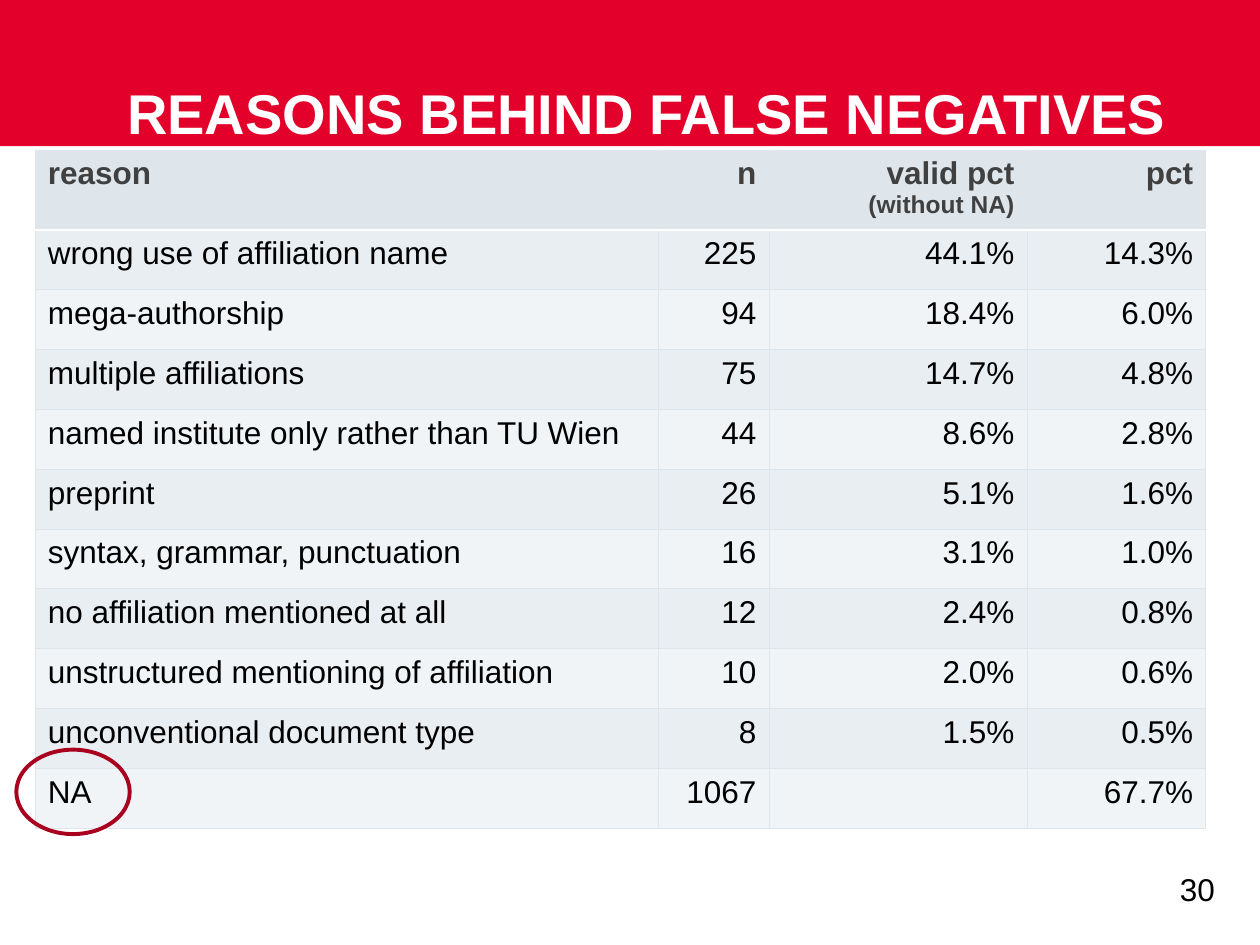
from dataclasses import dataclass

from lxml.etree import SubElement
from pptx import Presentation
from pptx.dml.color import RGBColor
from pptx.enum.shapes import MSO_SHAPE
from pptx.enum.text import MSO_ANCHOR, PP_ALIGN
from pptx.oxml.ns import qn
from pptx.util import Inches, Pt


@dataclass(frozen=True)
class Theme:
    """Colours, font and type sizes of the deck."""

    font: str = "Arial"
    banner: str = "E3002B"
    white: str = "FFFFFF"
    black: str = "000000"
    heading: str = "404040"
    grid: str = "DEE6EC"
    odd_band: str = "E9EEF2"
    even_band: str = "F0F4F7"
    marker: str = "AA0020"
    title_size: int = 32
    body_size: int = 18
    note_size: int = 14


THEME = Theme()
COLUMN_WIDTHS = (4.95, 0.88, 2.05, 1.42)
HEADER_HEIGHT = 0.62
ROWS = (
    ("reason", "n", "valid pct\n(without NA)", "pct"),
    ("wrong use of affiliation name", "225", "44.1%", "14.3%"),
    ("mega-authorship", "94", "18.4%", "6.0%"),
    ("multiple affiliations", "75", "14.7%", "4.8%"),
    ("named institute only rather than TU Wien", "44", "8.6%", "2.8%"),
    ("preprint", "26", "5.1%", "1.6%"),
    ("syntax, grammar, punctuation", "16", "3.1%", "1.0%"),
    ("no affiliation mentioned at all", "12", "2.4%", "0.8%"),
    ("unstructured mentioning of affiliation", "10", "2.0%", "0.6%"),
    ("unconventional document type", "8", "1.5%", "0.5%"),
    ("NA", "1067", "", "67.7%"),
)


def set_format(target, values):
    """Set each named attribute of the target."""
    for name, value in values.items():
        setattr(target, name, value)


def write(para, text, size, color, bold=False, align=PP_ALIGN.LEFT):
    """Write one formatted span into a paragraph."""
    para.alignment = align
    span = para.add_run()
    span.text = text
    set_format(span.font, {"name": THEME.font, "size": Pt(size), "bold": bold})
    span.font.color.rgb = RGBColor.from_string(color)


def add_banner(page, left, top, width, height):
    """Place the coloured band with the title at its foot."""
    band = page.shapes.add_shape(MSO_SHAPE.RECTANGLE, left, top, width, height)
    band.shadow.inherit = False
    band.fill.solid()
    band.fill.fore_color.rgb = RGBColor.from_string(THEME.banner)
    band.line.fill.background()
    title_top = top + Inches(0.27)
    box = page.shapes.add_textbox(
        left + Inches(1.01), title_top, Inches(8.73), top + height - title_top
    )
    set_format(box.text_frame, {
        "word_wrap": True,
        "vertical_anchor": MSO_ANCHOR.BOTTOM,
        "margin_left": 0,
        "margin_right": 0,
        "margin_top": 0,
        "margin_bottom": 0,
    })
    para = box.text_frame.paragraphs[0]
    para.line_spacing = Pt(THEME.title_size)
    write(para, "REASONS BEHIND FALSE NEGATIVES", THEME.title_size, THEME.white, True)


def set_borders(cell, borders):
    """Draw the cell edges, given as tag to colour and width."""
    properties = cell._tc.get_or_add_tcPr()
    for position, (tag, (color, width)) in enumerate(borders.items()):
        edge = SubElement(properties, qn(f"a:{tag}"), w=str(Pt(width)))
        fill = SubElement(edge, qn("a:solidFill"))
        SubElement(fill, qn("a:srgbClr"), val=color)
        properties.insert(position, edge)


def fill_cell(cell, text, row, column):
    """Write and colour one table cell."""
    header = row == 0
    band = THEME.grid if header else (THEME.even_band, THEME.odd_band)[row % 2]
    cell.fill.solid()
    cell.fill.fore_color.rgb = RGBColor.from_string(band)
    borders = dict.fromkeys(("lnL", "lnR", "lnT", "lnB"), (THEME.grid, 0.5))
    if row < 2:
        borders["lnB" if header else "lnT"] = (THEME.white, 1)
    set_borders(cell, borders)
    color = THEME.heading if header else THEME.black
    align = PP_ALIGN.RIGHT if column else PP_ALIGN.LEFT
    frame = cell.text_frame
    for index, line in enumerate(text.split("\n")):
        para = frame.add_paragraph() if index else frame.paragraphs[0]
        size = THEME.note_size if index else THEME.body_size
        write(para, line, size, color, header, align)


def add_reason_table(page, left, top, width, height):
    """Place the table of reasons with its banded rows."""
    table = page.shapes.add_table(
        len(ROWS), len(COLUMN_WIDTHS), left, top, width, height
    ).table
    table.horz_banding = False
    for column, share in zip(table.columns, COLUMN_WIDTHS):
        column.width = int(width * share / sum(COLUMN_WIDTHS))
    header_height = Inches(HEADER_HEIGHT)
    for row, texts in enumerate(ROWS):
        body_height = (height - header_height) // (len(ROWS) - 1)
        table.rows[row].height = body_height if row else header_height
        for column, text in enumerate(texts):
            fill_cell(table.cell(row, column), text, row, column)


def add_marker(page, left, top, width, height):
    """Place the ring around the last row label."""
    ring = page.shapes.add_shape(MSO_SHAPE.OVAL, left, top, width, height)
    ring.shadow.inherit = False
    ring.fill.background()
    ring.line.color.rgb = RGBColor.from_string(THEME.marker)
    ring.line.width = Pt(2.25)


def add_page_number(page, left, top, width, height):
    """Place the page number at the right."""
    box = page.shapes.add_textbox(left, top, width, height)
    box.text_frame.word_wrap = True
    write(box.text_frame.paragraphs[0], "30", THEME.body_size, THEME.black,
          align=PP_ALIGN.RIGHT)


def main():
    """Build the deck and save it."""
    deck = Presentation()
    set_format(deck, {"slide_width": Inches(10), "slide_height": Inches(7.5)})
    page = deck.slides.add_slide(deck.slide_layouts[6])
    regions = (
        (add_banner, (0, 0, 10, 1.16)),
        (add_page_number, (8.58, 6.86, 1.16, 0.64)),
        (add_reason_table, (0.28, 1.19, 9.29, 5.37)),
        (add_marker, (0.13, 5.95, 0.9, 0.67)),
    )
    for place, box in regions:
        place(page, *map(Inches, box))
    deck.save("out.pptx")


if __name__ == "__main__":
    main()
